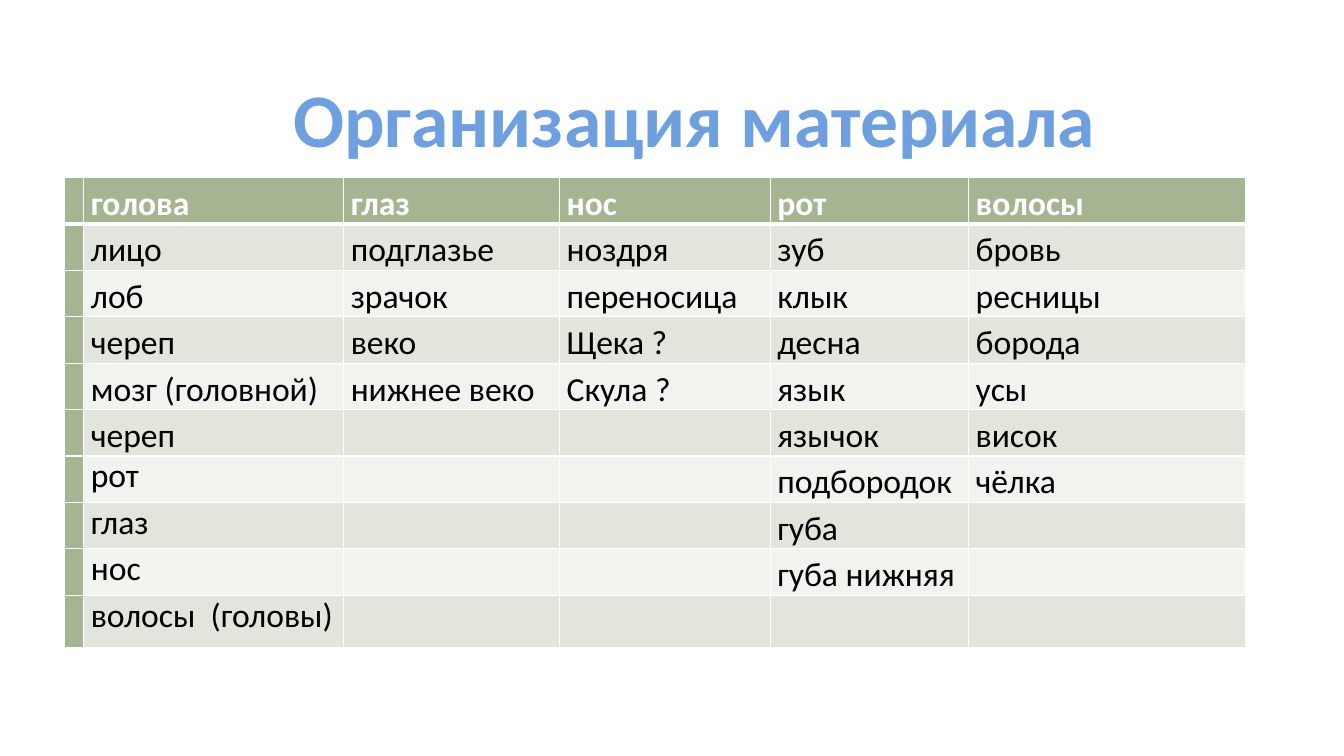
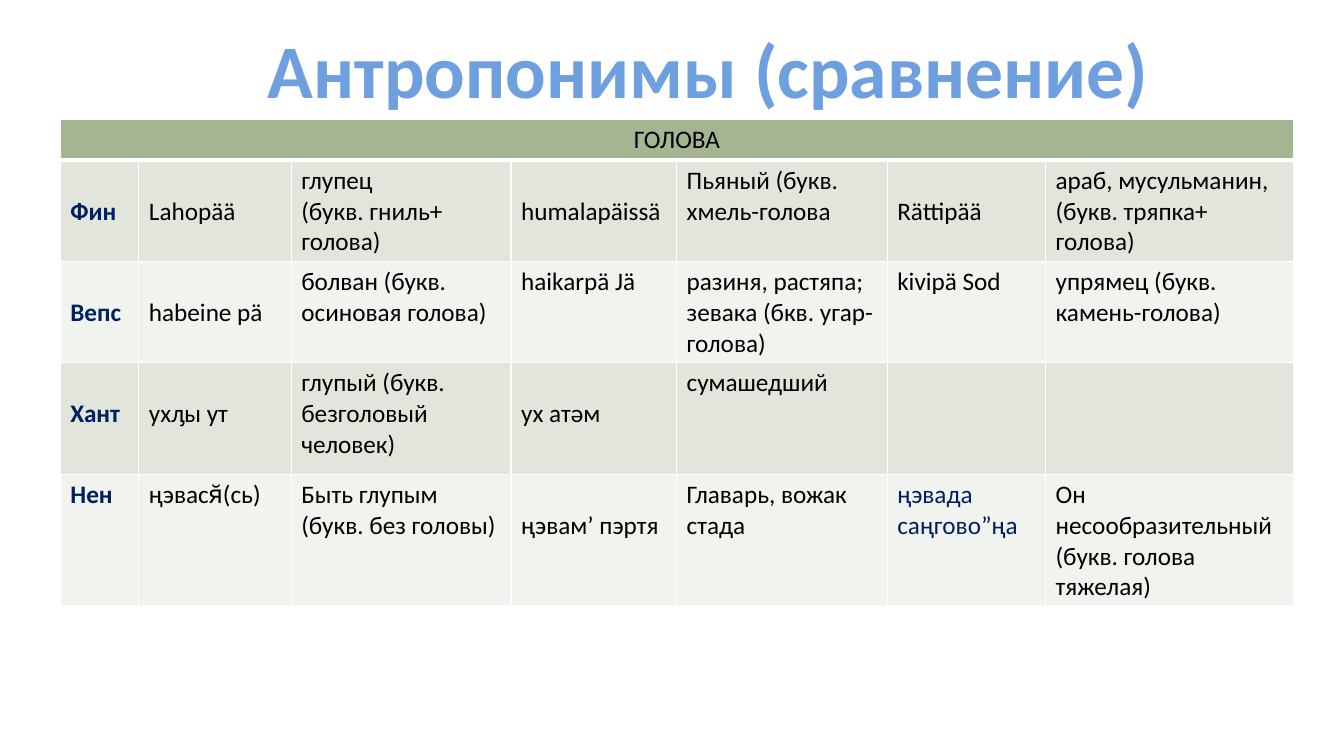
from lxml import etree
from pptx import Presentation
from pptx.dml.color import RGBColor
from pptx.enum.text import PP_ALIGN
from pptx.oxml.ns import qn
from pptx.util import Cm, Pt

LEFT, CENTER = PP_ALIGN.LEFT, PP_ALIGN.CENTER
FONT = "Calibri"
TITLE_BLUE = RGBColor(0x6E, 0x9F, 0xDE)
NAVY = RGBColor(0x00, 0x20, 0x60)
BLACK = RGBColor(0x00, 0x00, 0x00)
WHITE = RGBColor(0xFF, 0xFF, 0xFF)
GREEN = RGBColor(0xA5, 0xB5, 0x92)
BANDS = (RGBColor(0xF0, 0xF3, 0xEE), RGBColor(0xE1, 0xE5, 0xDC))
THIN, THICK = Pt(1), Pt(3)
LINE_DROP = 0.78

BODY_PARTS = [
    ["", "голова", "глаз", "нос", "рот", "волосы"],
    ["", "лицо", "подглазье", "ноздря", "зуб", "бровь"],
    ["", "лоб", "зрачок", "переносица", "клык", "ресницы"],
    ["", "череп", "веко", "Щека ?", "десна", "борода"],
    ["", "мозг (головной)", "нижнее веко", "Скула ?", "язык", "усы"],
    ["", "череп", "", "", "язычок", "висок"],
    ["", "рот", "", "", "подбородок", "чёлка"],
    ["", "глаз", "", "", "губа", ""],
    ["", "нос", "", "", "губа нижняя", ""],
    ["", "волосы  (головы)", "", "", "", ""],
]
FIRST_COMPOUND_ROW = 6

NICKNAMES = [
    ["ГОЛОВА", "", "", "", "", "", ""],
    ["Фин", "Lahopää", "глупец\n(букв. гниль+\nголова)", "humalapäissä",
     "Пьяный (букв. хмель-голова", "Rättipää",
     "араб, мусульманин, (букв. тряпка+ голова)"],
    ["Вепс", "habeine pä", "болван (букв. осиновая голова)", "haikarpä Jä",
     "разиня, растяпа; зевака (бкв. угар-голова)", "kivipä Sod",
     "упрямец (букв. камень-голова)"],
    ["Хант", "ухԓы ут", "глупый (букв. безголовый человек)", "ух атǝм",
     "сумашедший", "", ""],
    ["Нен", "ңэвася̆(сь)", "Быть глупым (букв. без головы)", "ңэвам’ пэртя",
     "Главарь, вожак стада", "ңэвада саңгово”ңа",
     "Он несообразительный (букв. голова тяжелая)"],
]
LOWERED_COLUMNS = {1: (0, 1, 3, 5), 2: (0, 1), 3: (0, 1, 3), 4: (3,)}
NAVY_PHRASE = (4, 5)


def write_text(frame, text, *, size, color=BLACK, bold=False, align=LEFT, spacing=1.0):
    frame.word_wrap = True
    for index, line in enumerate(text.split("\n")):
        paragraph = frame.paragraphs[0] if index == 0 else frame.add_paragraph()
        paragraph.alignment = align
        paragraph.line_spacing = spacing
        paragraph.font.size = Pt(size)
        run = paragraph.add_run()
        run.text = line
        run.font.name = FONT
        run.font.size = Pt(size)
        run.font.bold = bold
        run.font.color.rgb = color


def add_title(slide, box, text, align):
    title = slide.shapes.add_textbox(*map(Cm, box))
    write_text(title.text_frame, text, size=54, color=TITLE_BLUE, bold=True, align=align)


def set_borders(cell, row):
    properties = cell._tc.get_or_add_tcPr()
    widths = {"lnL": THIN, "lnR": THIN,
              "lnT": THICK if row == 1 else THIN,
              "lnB": THICK if row == 0 else THIN}
    for side, width in widths.items():
        border = etree.SubElement(properties, qn(f"a:{side}"), w=str(width))
        fill = etree.SubElement(border, qn("a:solidFill"))
        etree.SubElement(fill, qn("a:srgbClr"), val=str(WHITE))


def add_grid(slide, left, top, columns, heights, green_first_column=False):
    table = slide.shapes.add_table(
        len(heights), len(columns), Cm(left), Cm(top),
        Cm(sum(columns)), Cm(sum(heights))).table
    table.first_row = table.horz_banding = False
    for column, width in zip(table.columns, columns):
        column.width = Cm(width)
    for row, height in enumerate(heights):
        table.rows[row].height = Cm(height)
        for column in range(len(columns)):
            cell = table.cell(row, column)
            set_borders(cell, row)
            cell.fill.solid()
            is_green = row == 0 or (green_first_column and column == 0)
            cell.fill.fore_color.rgb = GREEN if is_green else BANDS[row % 2]
    return table


def body_parts_slide(slide):
    add_title(slide, (7.04, 1.68, 20.93, 2.57), "Организация материала", CENTER)
    table = add_grid(slide, 1.63, 4.47, (0.48, 6.55, 5.44, 5.31, 5, 6.98),
                     [1.17] * 9 + [1.32], green_first_column=True)
    for row, words in enumerate(BODY_PARTS):
        for column, word in enumerate(words):
            cell = table.cell(row, column)
            cell.margin_left = cell.margin_right = Cm(0.18)
            cell.margin_top = cell.margin_bottom = Cm(0)
            if word:
                compound = column == 1 and row >= FIRST_COMPOUND_ROW
                write_text(cell.text_frame, word, size=24, bold=row == 0,
                           color=WHITE if row == 0 else BLACK,
                           spacing=1.0 if compound else 1.15)


def nicknames_slide(slide):
    add_title(slide, (6.5, 0.46, 23.39, 2.57), "Антропонимы (сравнение)", LEFT)
    table = add_grid(slide, 1.52, 3.02, (1.98, 3.84, 5.54, 4.17, 5.31, 3.99, 6.25),
                     (1.02, 2.55, 2.55, 2.82, 3.3))
    table.cell(0, 0).merge(table.cell(0, len(NICKNAMES[0]) - 1))
    for row, phrases in enumerate(NICKNAMES):
        for column, phrase in enumerate(phrases):
            if not phrase:
                continue
            cell = table.cell(row, column)
            if column in LOWERED_COLUMNS.get(row, ()):
                cell.margin_top = Cm(0.13 + LINE_DROP)
            is_language = row > 0 and column == 0
            is_navy = is_language or (row, column) == NAVY_PHRASE
            write_text(cell.text_frame, phrase, size=18, bold=is_language,
                       color=NAVY if is_navy else BLACK,
                       align=CENTER if row == 0 else LEFT)


def main():
    deck = Presentation()
    deck.slide_width, deck.slide_height = Cm(33.87), Cm(19.05)
    blank = deck.slide_layouts[6]
    for build in (body_parts_slide, nicknames_slide):
        build(deck.slides.add_slide(blank))
    deck.save("out.pptx")


if __name__ == "__main__":
    main()
